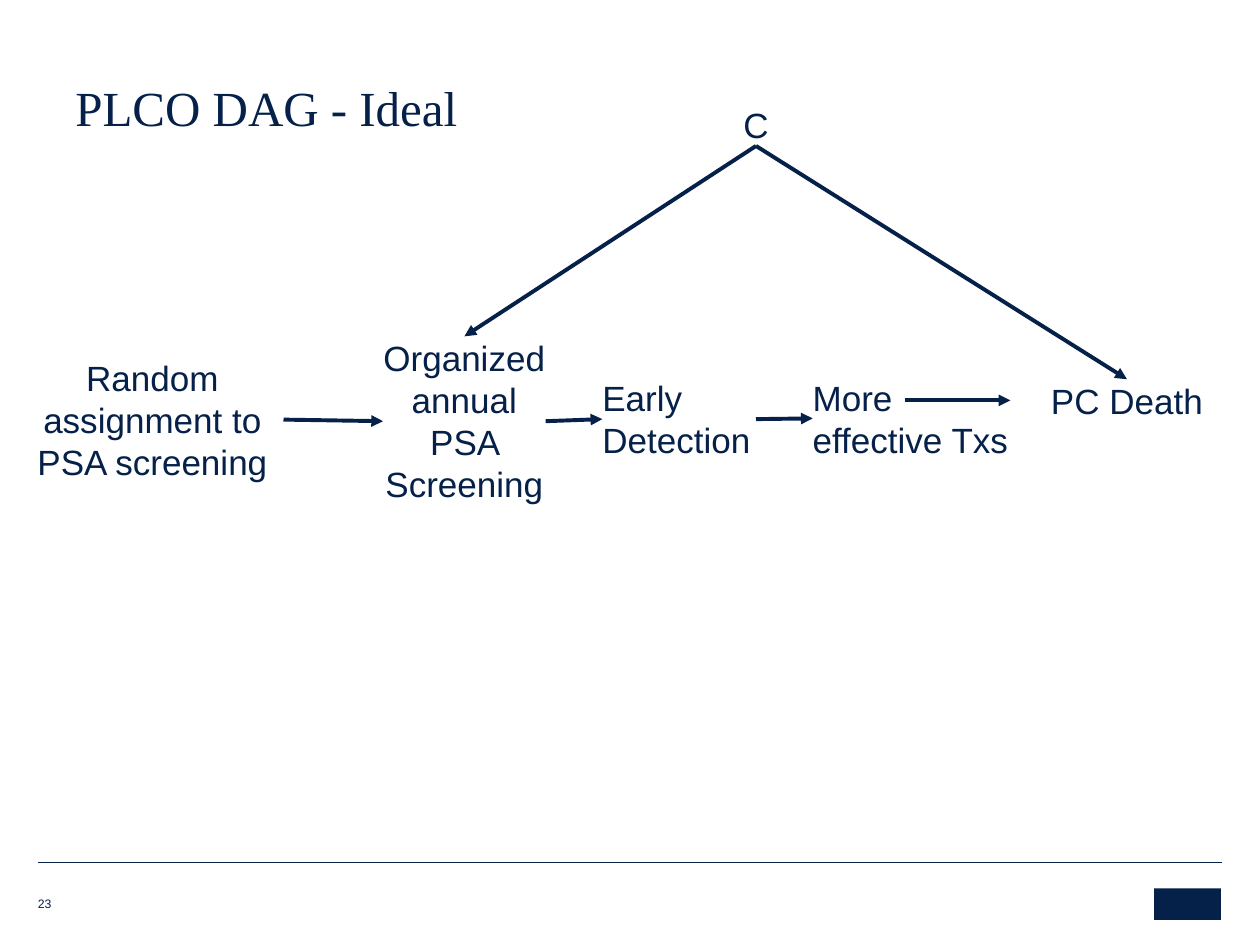
from dataclasses import dataclass

from lxml import etree
from pptx import Presentation
from pptx.dml.color import RGBColor
from pptx.enum import shapes, text
from pptx.oxml import ns
from pptx.util import Pt


@dataclass(frozen=True)
class Theme:
    """Colours, fonts, type sizes and line widths of the slide."""
    navy: RGBColor = RGBColor(0x05, 0x20, 0x49)
    heading_font: str = "Times New Roman"
    body_font: str = "Arial"
    heading_size: float = 28
    node_size: float = 20
    number_size: float = 7
    arrow_width: float = 2.25
    rule_width: float = 0.25


THEME = Theme()
CENTER = text.PP_ALIGN.CENTER
LEFT = text.PP_ALIGN.LEFT
BOTTOM = text.MSO_ANCHOR.BOTTOM
TOP = text.MSO_ANCHOR.TOP

NODES = [
    ("Random assignment to PSA screening", (12.2, 203.8, 149.8, 72.7), CENTER),
    ("Organized annual PSA Screening", (218.9, 192.2, 92.9, 97), CENTER),
    ("PC Death", (577.4, 216.7, 133.2, 24.2), CENTER),
    ("C", (360, 59, 144, 24.2), CENTER),
    ("Early Detection", (344.2, 215.3, 87.8, 48.5), LEFT),
    ("More effective Txs", (464.4, 215.3, 117.4, 48.5), LEFT),
]
CONFOUNDER = (432, 83.4)
ARROWS = [
    ((162, 239.8), (218.9, 240.7)),
    ((311.8, 240.7), (344.2, 239.5)),
    ((432, 239.5), (464.4, 239.1)),
    ((517, 228.8), (577.4, 228.8)),
    (CONFOUNDER, (265.4, 192.2)),
    (CONFOUNDER, (644, 216.7)),
]


def apply_format(target, values):
    """Set each named attribute of the target."""
    for name, value in values.items():
        setattr(target, name, value)


def add_label(slide, wording, box, size, font=THEME.body_font, align=LEFT,
              anchor=TOP, insets=(0, 0), spacing=None):
    """Add a wrapped text box with one paragraph."""
    frame = slide.shapes.add_textbox(*map(Pt, box)).text_frame
    side, edge = map(Pt, insets)
    apply_format(frame, {
        "word_wrap": True, "vertical_anchor": anchor,
        "margin_left": side, "margin_right": side,
        "margin_top": edge, "margin_bottom": edge,
    })
    paragraph = frame.paragraphs[0]
    apply_format(paragraph, {"alignment": align, "line_spacing": spacing})
    run = paragraph.add_run()
    run.text = wording
    apply_format(run.font, {"name": font, "size": Pt(size)})
    run.font.color.rgb = THEME.navy


def add_rule(slide, start, end, width, arrow=False):
    """Add a straight line, with an arrowhead at its end if wanted."""
    rule = slide.shapes.add_connector(
        shapes.MSO_CONNECTOR.STRAIGHT, *map(Pt, start + end))
    rule.line.width = Pt(width)
    rule.line.color.rgb = THEME.navy
    if arrow:
        head = etree.SubElement(rule.line._get_or_add_ln(), ns.qn("a:tailEnd"))
        head.set("type", "triangle")
    etree.SubElement(rule._element.spPr, ns.qn("a:effectLst"))


def add_emblem(slide, box):
    """Add the plain block that holds the place of the emblem."""
    emblem = slide.shapes.add_shape(shapes.MSO_SHAPE.RECTANGLE, *map(Pt, box))
    emblem.shadow.inherit = False
    emblem.fill.solid()
    emblem.fill.fore_color.rgb = THEME.navy
    emblem.line.fill.background()


def add_footer(slide):
    """Add the footer rule, emblem and slide number."""
    add_rule(slide, (21.6, 492.5), (698.4, 492.5), THEME.rule_width)
    add_emblem(slide, (659.5, 507.6, 38.2, 18))
    add_label(slide, "23", (21.6, 508.3, 19.4, 12.2), THEME.number_size,
              anchor=BOTTOM)


def main():
    """Build the causal diagram slide and save it."""
    deck = Presentation()
    apply_format(deck, {"slide_width": Pt(720), "slide_height": Pt(540)})
    slide = deck.slides.add_slide(deck.slide_layouts[6])
    add_footer(slide)
    add_label(slide, "PLCO DAG - Ideal", (36, 33.1, 643.7, 48.2),
              THEME.heading_size, THEME.heading_font, anchor=BOTTOM,
              insets=(7.2, 3.6), spacing=0.85)
    for wording, box, align in NODES:
        add_label(slide, wording, box, THEME.node_size, align=align)
    for start, end in ARROWS:
        add_rule(slide, start, end, THEME.arrow_width, arrow=True)
    deck.save("out.pptx")


if __name__ == "__main__":
    main()
